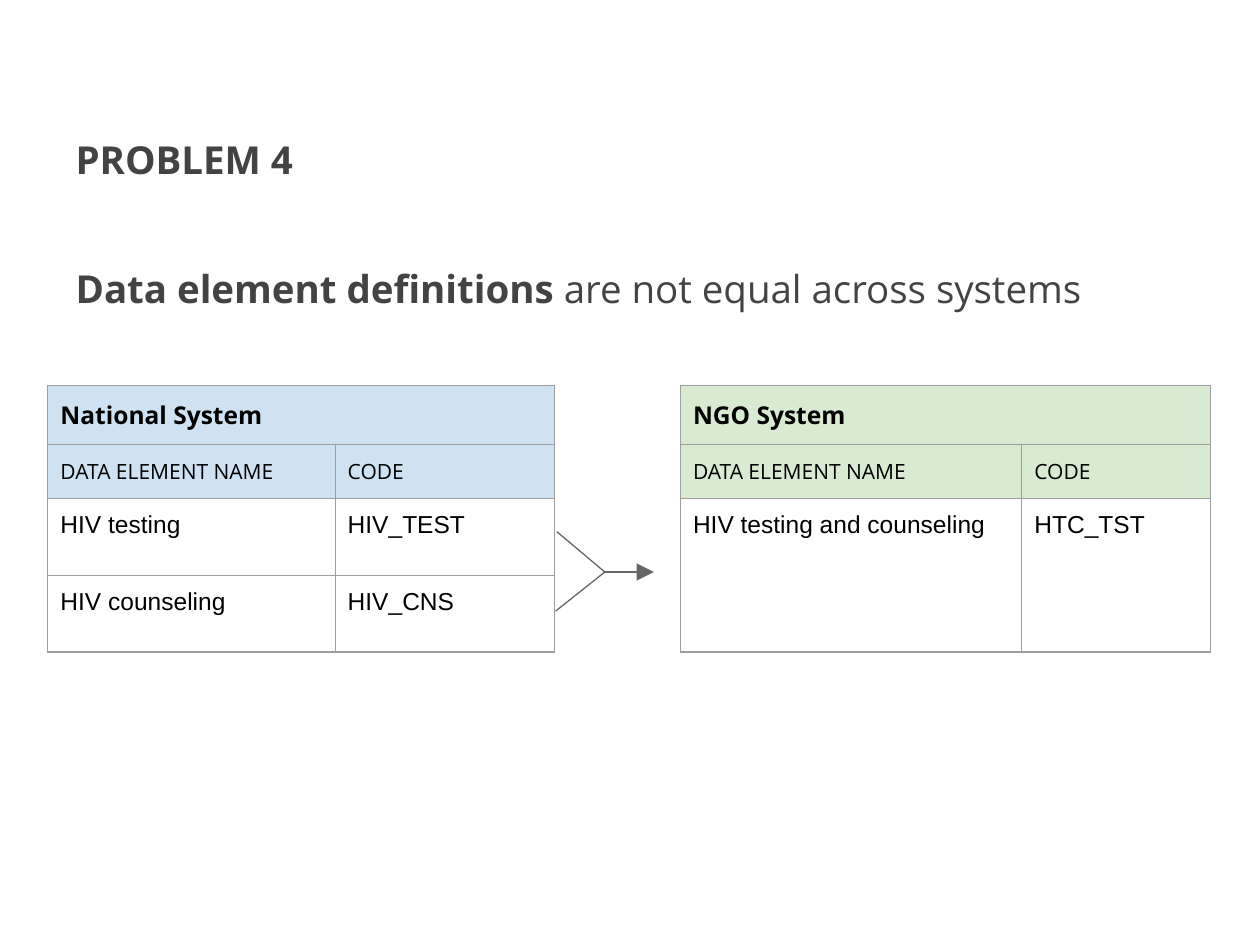
"""Build a slide showing data element definitions that differ between two systems."""
from dataclasses import dataclass

from lxml.etree import SubElement
from pptx import Presentation
from pptx.dml.color import RGBColor
from pptx.enum.shapes import MSO_CONNECTOR
from pptx.enum.text import MSO_ANCHOR, MSO_AUTO_SIZE, PP_ALIGN
from pptx.oxml.ns import qn
from pptx.util import Inches, Pt


@dataclass(frozen=True)
class Theme:
    heading_font: str = "Open Sans"
    data_font: str = "Arial"
    heading_color: str = "434343"
    table_color: str = "000000"
    border_color: str = "9E9E9E"
    arrow_color: str = "666666"
    heading_size: int = 22
    table_size: int = 14
    label_size: int = 12
    line_width: float = 0.75
    inset: float = 0.1


THEME = Theme()
TITLE = [("PROBLEM 4", True)]
STATEMENT = [("Data element definitions", True), (" are not equal across systems", False)]
LABELS = ["DATA ELEMENT NAME", "CODE"]
SYSTEMS = [
    {"name": "National System", "fill": "CFE2F3", "left": 0.38, "columns": [2.28, 1.74],
     "elements": [["HIV testing", "HIV_TEST"], ["HIV counseling", "HIV_CNS"]]},
    {"name": "NGO System", "fill": "D9EAD3", "left": 5.4, "columns": [2.71, 1.5],
     "elements": [["HIV testing and counseling", "HTC_TST"]]},
]
TABLE_TOP = 3.06
ROW_HEIGHTS = [0.46, 0.43, 0.61, 0.61]
JUNCTION = (4.8, 4.54)
BRANCH_STARTS = [(4.42, 4.22), (4.41, 4.85)]
ARROW_TIP = (5.19, 4.54)


def set_font(font, name, size, color, bold=None):
    font.name, font.size, font.bold = name, Pt(size), bold
    font.color.rgb = RGBColor.from_string(color)


def set_margins(target):
    target.margin_left = target.margin_right = Inches(THEME.inset)
    target.margin_top = target.margin_bottom = Inches(THEME.inset)


def fill_placeholder(shape, box, runs, anchor):
    shape.left, shape.top, shape.width, shape.height = map(Inches, box)
    frame = shape.text_frame
    set_margins(frame)
    frame.word_wrap = True
    frame.auto_size = MSO_AUTO_SIZE.NONE
    frame.vertical_anchor = anchor
    paragraph = frame.paragraphs[0]
    paragraph.alignment = PP_ALIGN.LEFT
    paragraph.space_before = Pt(0)
    set_font(paragraph.font, THEME.heading_font, THEME.heading_size, THEME.heading_color)
    properties = paragraph._p.get_or_add_pPr()
    properties.set("marL", "0")
    properties.set("indent", "0")
    properties.insert_element_before(properties.makeelement(qn("a:buNone")), "a:defRPr")
    for text, bold in runs:
        run = paragraph.add_run()
        run.text = text
        set_font(run.font, THEME.heading_font, THEME.heading_size, THEME.heading_color, bold)


def add_borders(cell):
    properties = cell._tc.get_or_add_tcPr()
    for position, side in enumerate(("lnL", "lnR", "lnT", "lnB")):
        line = properties.makeelement(qn(f"a:{side}"), w=str(Pt(THEME.line_width)))
        fill = SubElement(line, qn("a:solidFill"))
        SubElement(fill, qn("a:srgbClr"), val=THEME.border_color)
        properties.insert(position, line)


def format_cell(cell, row, fill):
    set_margins(cell)
    if row < 2:
        cell.fill.solid()
        cell.fill.fore_color.rgb = RGBColor.from_string(fill)
    else:
        cell.fill.background()
    add_borders(cell)
    name = THEME.heading_font if row < 2 else THEME.data_font
    size = THEME.label_size if row == 1 else THEME.table_size
    set_font(cell.text_frame.paragraphs[0].font, name, size, THEME.table_color, row == 0)


def add_system_table(slide, system):
    columns = system["columns"]
    frame = slide.shapes.add_table(
        len(ROW_HEIGHTS), len(columns), Inches(system["left"]), Inches(TABLE_TOP),
        Inches(sum(columns)), Inches(sum(ROW_HEIGHTS)))
    table = frame.table
    table.first_row = table.horz_banding = False
    for column, width in zip(table.columns, columns):
        column.width = Inches(width)
    for row, height in zip(table.rows, ROW_HEIGHTS):
        row.height = Inches(height)
    content = [[system["name"]], LABELS, *system["elements"]]
    for row_index, texts in enumerate(content):
        for column_index, text in enumerate(texts):
            table.cell(row_index, column_index).text = text
    for row_index, row in enumerate(table.rows):
        for cell in row.cells:
            format_cell(cell, row_index, system["fill"])
    table.cell(0, 0).merge(table.cell(0, 1))
    if len(system["elements"]) == 1:
        for column_index in range(len(columns)):
            table.cell(2, column_index).merge(table.cell(3, column_index))


def add_line(slide, start, end, arrow=False):
    connector = slide.shapes.add_connector(
        MSO_CONNECTOR.STRAIGHT, *map(Inches, (*start, *end)))
    connector.line.color.rgb = RGBColor.from_string(THEME.arrow_color)
    connector.line.width = Pt(THEME.line_width)
    if arrow:
        SubElement(connector.line._get_or_add_ln(), qn("a:tailEnd"),
                   type="triangle", w="lg", len="lg")
    SubElement(connector._element.spPr, qn("a:effectLst"))


def main():
    presentation = Presentation()
    presentation.slide_width, presentation.slide_height = Inches(10), Inches(7.5)
    slide = presentation.slides.add_slide(presentation.slide_layouts[1])
    title, body = slide.placeholders
    fill_placeholder(title, (0.5, 0.3, 9, 1.25), TITLE, MSO_ANCHOR.BOTTOM)
    fill_placeholder(body, (0.5, 2, 9, 0.85), STATEMENT, MSO_ANCHOR.TOP)
    for system in SYSTEMS:
        add_system_table(slide, system)
    add_line(slide, JUNCTION, ARROW_TIP, arrow=True)
    for start in BRANCH_STARTS:
        add_line(slide, JUNCTION, start)
    presentation.save("out.pptx")


if __name__ == "__main__":
    main()
